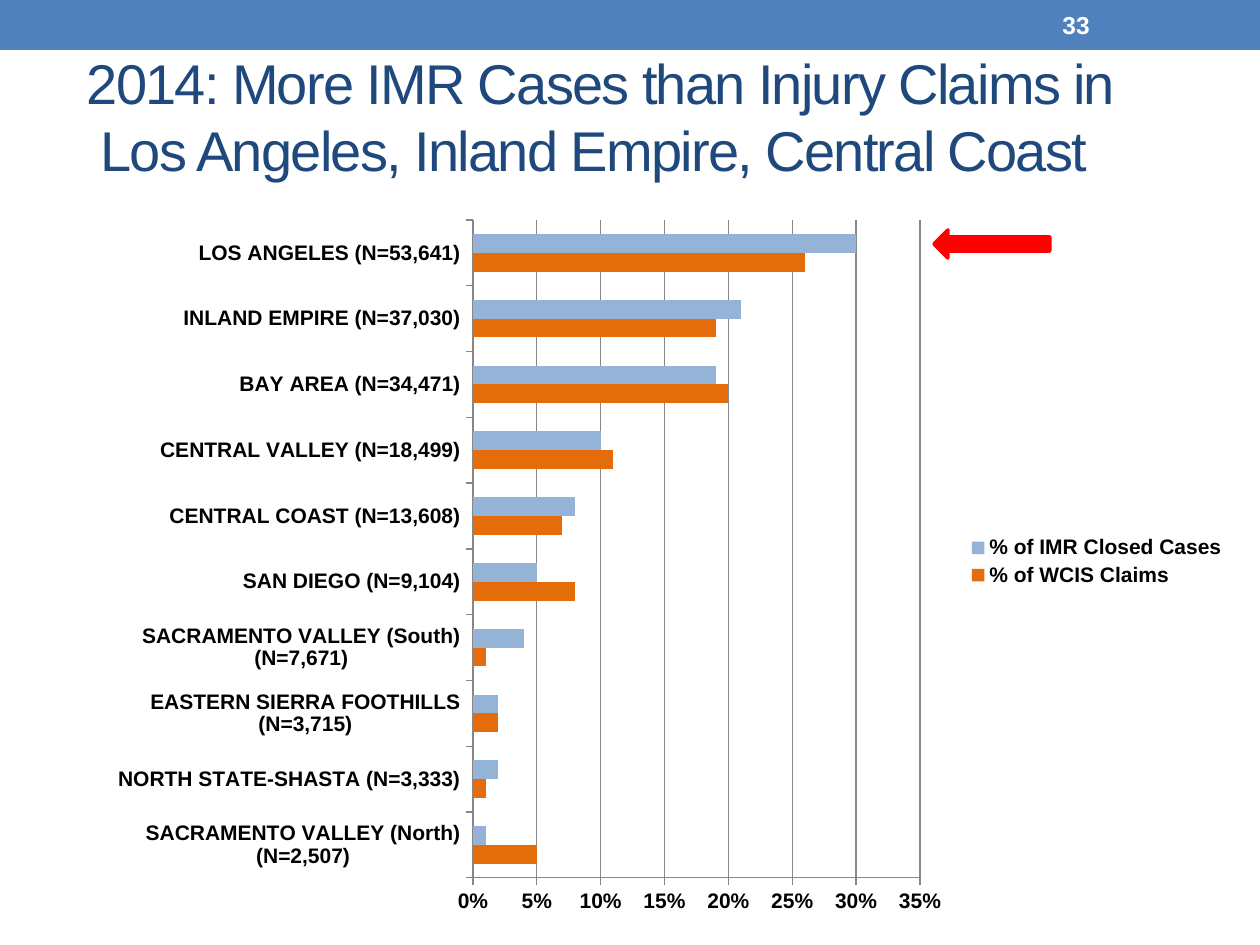
from dataclasses import dataclass

from lxml import etree
from pptx import Presentation
from pptx.chart.data import CategoryChartData
from pptx.dml.color import RGBColor
from pptx.enum.chart import XL_CHART_TYPE as ChartType
from pptx.enum.chart import XL_LEGEND_POSITION as LegendPosition
from pptx.enum.chart import XL_TICK_MARK as TickMark
from pptx.enum.shapes import MSO_SHAPE as Preset
from pptx.enum.text import MSO_ANCHOR as Anchor
from pptx.enum.text import MSO_AUTO_SIZE as AutoSize
from pptx.enum.text import PP_ALIGN as Align
from pptx.oxml.ns import qn
from pptx.util import Emu, Pt

PX_PER_INCH = 126


@dataclass(frozen=True)
class Theme:
    font: str = "Arial"
    bar: str = "4F81BD"
    title: str = "1F497D"
    page_number: str = "FFFFFF"
    arrow: str = "FF0000"
    grid: str = "878787"
    chart_text: str = "000000"
    imr: str = "95B3D7"
    wcis: str = "E46C0A"
    title_size: int = 32
    number_size: int = 14
    chart_size: int = 12


@dataclass(frozen=True)
class Box:
    left: int
    top: int
    width: int
    height: int

    def emu(self) -> tuple:
        return tuple(px(n) for n in (self.left, self.top, self.width, self.height))


@dataclass(frozen=True)
class Region:
    name: str
    wcis: float
    imr: float


THEME = Theme()
REGIONS = [
    Region("SACRAMENTO VALLEY (North) (N=2,507)", 0.05, 0.01),
    Region("NORTH STATE-SHASTA (N=3,333)", 0.01, 0.02),
    Region("EASTERN SIERRA FOOTHILLS (N=3,715)", 0.02, 0.02),
    Region("SACRAMENTO VALLEY (South) (N=7,671)", 0.01, 0.04),
    Region("SAN DIEGO (N=9,104)", 0.08, 0.05),
    Region("CENTRAL COAST (N=13,608)", 0.07, 0.08),
    Region("CENTRAL VALLEY (N=18,499)", 0.11, 0.1),
    Region("BAY AREA (N=34,471)", 0.2, 0.19),
    Region("INLAND EMPIRE (N=37,030)", 0.19, 0.21),
    Region("LOS ANGELES (N=53,641)", 0.26, 0.3),
]


def px(count: int) -> Emu:
    return Emu(round(count * 914400 / PX_PER_INCH))


def rgb(color: str) -> RGBColor:
    return RGBColor.from_string(color)


def style_font(font, size: int, color: str, bold: bool) -> None:
    font.name, font.size, font.bold = THEME.font, Pt(size), bold
    font.color.rgb = rgb(color)


def add_solid(slide, preset, box: Box, color: str, line_width: float = 0) -> None:
    shape = slide.shapes.add_shape(preset, *box.emu())
    shape.shadow.inherit = False
    shape.fill.solid()
    shape.fill.fore_color.rgb = rgb(color)
    if line_width:
        shape.line.color.rgb = rgb(color)
        shape.line.width = Pt(line_width)
    else:
        shape.line.fill.background()


def write_lines(shape, lines: list, size: int, color: str,
                bold: bool = False, spacing: int = 0) -> None:
    frame = shape.text_frame
    frame.word_wrap = True
    frame.auto_size = AutoSize.NONE
    frame.vertical_anchor = Anchor.MIDDLE
    para = frame.paragraphs[0]
    para.alignment = Align.LEFT
    for index, line in enumerate(lines):
        if index:
            para.add_line_break()
        span = para.add_run()
        span.text = line
        style_font(span.font, size, color, bold)
        if spacing:
            span.font._element.set("spc", str(spacing * 100))


def place_plot(chart, frame: Box, inner: Box) -> None:
    """Fix the plot inside the chart frame; the file stores fractions of it."""
    plot_area = chart._chartSpace.find(".//" + qn("c:plotArea"))
    layout = plot_area.find(qn("c:layout"))
    if layout is None:
        layout = etree.Element(qn("c:layout"))
        plot_area.insert(0, layout)
    manual = etree.SubElement(layout, qn("c:manualLayout"))
    settings = {"layoutTarget": "inner", "xMode": "edge", "yMode": "edge",
                "x": (inner.left - frame.left) / frame.width,
                "y": (inner.top - frame.top) / frame.height,
                "w": inner.width / frame.width,
                "h": inner.height / frame.height}
    for tag, value in settings.items():
        etree.SubElement(manual, qn(f"c:{tag}")).set("val", str(value))


def add_region_chart(slide, frame: Box, inner: Box) -> None:
    data = CategoryChartData(number_format="0%")
    data.categories = [region.name for region in REGIONS]
    data.add_series("% of WCIS Claims", [region.wcis for region in REGIONS])
    data.add_series("% of IMR Closed Cases", [region.imr for region in REGIONS])
    chart = slide.shapes.add_chart(ChartType.BAR_CLUSTERED, *frame.emu(), data).chart
    style_font(chart.font, THEME.chart_size, THEME.chart_text, True)
    chart.has_title = False
    place_plot(chart, frame, inner)

    # Bars
    plot = chart.plots[0]
    plot.gap_width, plot.overlap, plot.vary_by_categories = 150, 0, False
    for series, color in zip(plot.series, (THEME.wcis, THEME.imr)):
        series.format.fill.solid()
        series.format.fill.fore_color.rgb = rgb(color)

    # Axes and grid
    values = chart.value_axis
    values.minimum_scale, values.maximum_scale, values.major_unit = 0, 0.35, 0.05
    values.has_major_gridlines = True
    values.tick_labels.number_format = "0%"
    values.tick_labels.number_format_is_linked = False
    for axis in (values, chart.category_axis):
        axis.major_tick_mark = TickMark.OUTSIDE
    for part in (values, chart.category_axis, values.major_gridlines):
        part.format.line.color.rgb = rgb(THEME.grid)
        part.format.line.width = Pt(0.75)

    # Legend
    chart.has_legend = True
    chart.legend.position = LegendPosition.RIGHT
    chart.legend.include_in_layout = False


def main() -> None:
    deck = Presentation()
    deck.slide_width, deck.slide_height = px(1260), px(945)
    slide = deck.slides.add_slide(deck.slide_layouts[5])

    # Header bar and page number
    add_solid(slide, Preset.RECTANGLE, Box(0, 0, 1260, 50), THEME.bar)
    number = slide.shapes.add_textbox(*Box(1050, 2, 147, 45).emu())
    write_lines(number, ["33"], THEME.number_size, THEME.page_number, bold=True)

    # Title
    title = slide.shapes.title
    title.left, title.top, title.width, title.height = Box(74, 53, 1144, 126).emu()
    write_lines(title, ["2014: More IMR Cases than Injury Claims in",
                        " Los Angeles, Inland Empire, Central Coast"],
                THEME.title_size, THEME.title, spacing=-1)

    # Chart with the arrow marking the top region
    add_region_chart(slide, Box(105, 199, 1134, 725), Box(473, 220, 447, 658))
    add_solid(slide, Preset.LEFT_ARROW, Box(934, 230, 116, 28), THEME.arrow, 2.08)

    deck.save("out.pptx")


if __name__ == "__main__":
    main()
